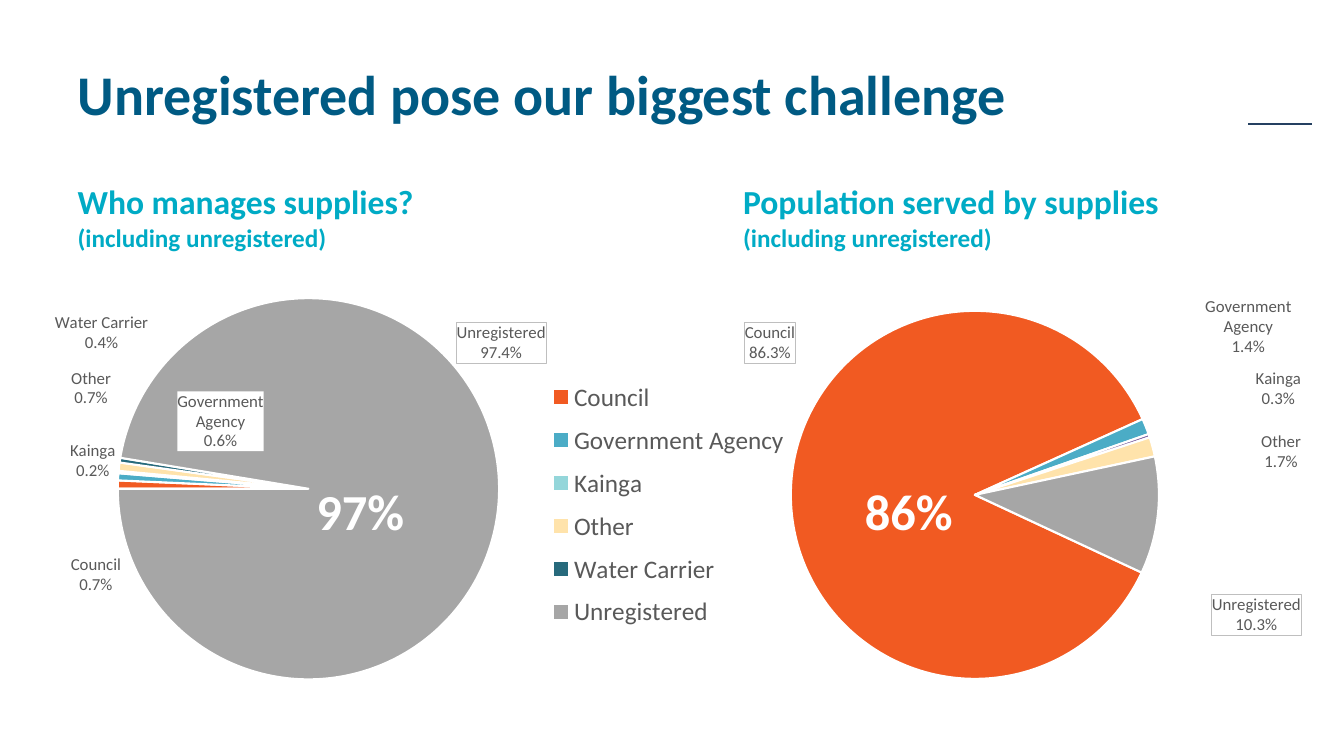
"""Build a slide with two pie charts about water supplies and the people they serve."""
import math
from dataclasses import dataclass

from lxml import etree
from pptx import Presentation
from pptx.chart.data import CategoryChartData
from pptx.dml.color import RGBColor
from pptx.enum.chart import XL_CHART_TYPE, XL_LEGEND_POSITION
from pptx.enum.shapes import MSO_CONNECTOR
from pptx.enum.text import MSO_ANCHOR, MSO_AUTO_SIZE, PP_ALIGN
from pptx.oxml import parse_xml
from pptx.oxml.ns import nsdecls, qn
from pptx.util import Inches, Pt

PIE = XL_CHART_TYPE.PIE
LEGEND_RIGHT = XL_LEGEND_POSITION.RIGHT
STRAIGHT = MSO_CONNECTOR.STRAIGHT
TOP = MSO_ANCHOR.TOP
FIT_SHAPE = MSO_AUTO_SIZE.SHAPE_TO_FIT_TEXT
LEFT = PP_ALIGN.LEFT


@dataclass(frozen=True)
class Theme:
    """Colours, font and type sizes of the slide."""
    font: str = "Calibri"
    title: str = "005A83"
    heading: str = "00ABC5"
    label: str = "595959"
    frame: str = "BFBFBF"
    rule: str = "254061"
    white: str = "FFFFFF"
    title_size: int = 40
    share_size: int = 36
    heading_size: int = 24
    small_size: int = 18
    label_size: int = 12


THEME = Theme()
TITLE = "Unregistered pose our biggest challenge"
SUBHEADING = "(including unregistered)"
CATEGORIES = ["Council", "Government Agency", "Kainga", "Other", "Water Carrier", "Unregistered"]
LABEL_WIDTHS = [0.5, 1.33, 0.45, 0.4, 0.9, 0.87]
LABEL_HEIGHT = 0.4
LABEL_GAP = 0.06
PIES = [
    {
        "heading": "Who manages supplies?", "heading_box": (0.77, 1.79, 6.16, 0.72),
        "share": "97%", "share_box": (3.04, 4.71, 1.08, 0.71),
        "box": (-0.16, 2.88, 8.82, 3.94), "plot": (0.13, 0.02, 0.47, 0.96),
        "legend": (0.635, 0.2, 0.27, 0.68), "start": 270,
        "values": [0.7, 0.6, 0.2, 0.7, 0.4, 97.4],
        "colors": ["F15A22", "4BACC6", "94D6DA", "FFE3AB", "276A7C", "A6A6A6"],
        "centers": [(0.95, 5.7), (1.95, 4.18), (0.92, 4.57), (0.9, 3.85), (1.02, 3.3), (4.96, 3.4)],
        "filled": {1, 5}, "framed": {5}, "wrapped": {},
    },
    {
        "heading": "Population served by supplies", "heading_box": (7.37, 1.79, 5.58, 0.72),
        "share": "86%", "share_box": (8.48, 4.71, 1.08, 0.71),
        "box": (6.67, 2.94, 6.52, 3.94), "plot": (0.18, 0, 0.56, 1),
        "legend": None, "start": 115,
        "values": [86.3, 1.4, 0.3, 1.7, 0, 10.3],
        "colors": ["F15A22", "4BACC6", "8064A2", "FFE3AB", "276A7C", "A6A6A6"],
        "centers": [(7.64, 3.4), (12.39, 3.23), (12.68, 3.85), (12.71, 4.48), None, (12.45, 6.1)],
        "filled": {0, 5}, "framed": {0, 5}, "wrapped": {1: (0.87, 0.6)},
    },
]


def color(code):
    """Turn a hex code into a colour."""
    return RGBColor.from_string(code)


def style(font, size, code, bold=False):
    """Set the face, size and colour of a font."""
    font.name, font.size, font.bold = THEME.font, Pt(size), bold
    font.color.rgb = color(code)


def write(frame, lines, margin=None, wrap=True):
    """Fill a text frame with one styled run per paragraph."""
    frame.word_wrap, frame.auto_size, frame.vertical_anchor = wrap, FIT_SHAPE, TOP
    if margin is not None:
        frame.margin_left = frame.margin_top = frame.margin_right = frame.margin_bottom = margin
    for index, (text, size, code) in enumerate(lines):
        para = frame.add_paragraph() if index else frame.paragraphs[0]
        para.alignment = LEFT
        para.space_before = Pt(1 if index else 0)
        span = para.add_run()
        span.text = text
        style(span.font, size, code, True)


def manual_layout(box, inner=False):
    """Give the layout element for a box in fractions of the chart."""
    target = '<c:layoutTarget val="inner"/>' if inner else ""
    modes = '<c:xMode val="edge"/><c:yMode val="edge"/>'
    sizes = "".join(f'<c:{name} val="{value}"/>' for name, value in zip("xywh", box))
    return parse_xml(f'<c:layout {nsdecls("c")}><c:manualLayout>{target}{modes}{sizes}'
                     "</c:manualLayout></c:layout>")


def label_offset(pie, index):
    """Give the move, in fractions of the chart, from the pie's rim to the label's place."""
    left, top, width, height = pie["box"]
    x, y, w, h = pie["plot"]
    radius = min(w * width, h * height) / 2 + LABEL_GAP
    values = pie["values"]
    turn = (sum(values[:index]) + values[index] / 2) / sum(values) * 360
    angle = (90 - pie["start"] - turn) % 360
    across, up = math.cos(math.radians(angle)), math.sin(math.radians(angle))
    label_width, label_height = pie["wrapped"].get(index, (LABEL_WIDTHS[index], LABEL_HEIGHT))
    side = math.copysign(label_width / 2, across)
    level = min(angle % 180, 180 - angle % 180) <= 5
    lift = 0 if level else math.copysign(label_height / 2, up)
    rim_x = left + (x + w / 2) * width + radius * across + side
    rim_y = top + (y + h / 2) * height - radius * up - lift
    goal_x, goal_y = pie["centers"][index]
    return (goal_x - rim_x) / width, (goal_y - rim_y) / height


def label_xml(pie, index):
    """Give the data label element of one slice."""
    if pie["centers"][index] is None:
        return f'<c:dLbl><c:idx val="{index}"/><c:delete val="1"/></c:dLbl>'
    x, y = label_offset(pie, index)
    solid = '<a:solidFill><a:srgbClr val="{}"/></a:solidFill>'.format
    fill = solid(THEME.white) if index in pie["filled"] else "<a:noFill/>"
    line = solid(THEME.frame) if index in pie["framed"] else "<a:noFill/>"
    return (f'<c:dLbl><c:idx val="{index}"/><c:layout><c:manualLayout><c:x val="{x:.4f}"/>'
            f'<c:y val="{y:.4f}"/></c:manualLayout></c:layout>'
            f'<c:numFmt formatCode="0.0%" sourceLinked="0"/>'
            f'<c:spPr>{fill}<a:ln w="9525">{line}</a:ln></c:spPr>{label_text()}</c:dLbl>')


def label_text():
    """Give the text style and shown parts shared by all data labels."""
    flags = {"LegendKey": 0, "Val": 0, "CatName": 1, "SerName": 0, "Percent": 1, "BubbleSize": 0}
    shown = "".join(f'<c:show{name} val="{flag}"/>' for name, flag in flags.items())
    return (f'<c:txPr><a:bodyPr/><a:lstStyle/><a:p><a:pPr><a:defRPr sz="{THEME.label_size * 100}">'
            f'<a:solidFill><a:srgbClr val="{THEME.label}"/></a:solidFill>'
            f'<a:latin typeface="{THEME.font}"/></a:defRPr></a:pPr><a:endParaRPr lang="en-US"/></a:p>'
            f'</c:txPr><c:dLblPos val="outEnd"/>{shown}<c:separator>\n</c:separator>')


def add_pie(page, pie):
    """Add one pie chart with its labels and, if wanted, its legend."""
    data = CategoryChartData()
    data.categories = CATEGORIES
    data.add_series("Series 1", pie["values"])
    chart = page.shapes.add_chart(PIE, *map(Inches, pie["box"]), data).chart
    style(chart.font, THEME.label_size, THEME.label)
    chart.has_title = False
    chart.has_legend = pie["legend"] is not None
    if chart.has_legend:
        chart.legend.position = LEGEND_RIGHT
        chart.legend.include_in_layout = False
        style(chart.legend.font, THEME.small_size, THEME.label)
        legend = chart.legend._element
        for old in legend.findall(qn("c:layout")):
            legend.remove(old)
        legend.find(qn("c:legendPos")).addnext(manual_layout(pie["legend"]))
    plot = chart.plots[0]
    plot.vary_by_categories = True
    series = plot.series[0]
    for index, code in enumerate(pie["colors"]):
        form = series.points[index].format
        form.fill.solid()
        form.fill.fore_color.rgb = color(code)
        form.line.color.rgb = color(THEME.white)
        form.line.width = Pt(1.5)
    labels = "".join(label_xml(pie, index) for index in range(len(CATEGORIES)))
    series._element.find(qn("c:cat")).addprevious(parse_xml(
        f'<c:dLbls {nsdecls("c", "a")}>{labels}<c:numFmt formatCode="0.0%" sourceLinked="0"/>'
        f'{label_text()}<c:showLeaderLines val="0"/></c:dLbls>'))
    group = plot._element
    for old in group.findall(qn("c:firstSliceAng")):
        group.remove(old)
    etree.SubElement(group, qn("c:firstSliceAng")).set("val", str(pie["start"]))
    area = group.getparent()
    for old in area.findall(qn("c:layout")):
        area.remove(old)
    area.insert(0, manual_layout(pie["plot"], True))


def main():
    """Build and save the deck."""
    deck = Presentation()
    deck.slide_width, deck.slide_height = Inches(13.33), Inches(7.5)
    page = deck.slides.add_slide(deck.slide_layouts[5])
    title = page.shapes.title
    title.left, title.top, title.width, title.height = map(Inches, (0.77, 0.59, 10.16, 0.67))
    write(title.text_frame, [(TITLE, THEME.title_size, THEME.title)], 0)
    rule = page.shapes.add_connector(STRAIGHT, *map(Inches, (13.01, 1.23, 12.38, 1.23)))
    rule.line.color.rgb, rule.line.width = color(THEME.rule), Pt(1)
    etree.SubElement(rule._element.spPr, qn("a:effectLst"))
    for pie in PIES:
        add_pie(page, pie)
    for pie in PIES:
        heading = page.shapes.add_textbox(*map(Inches, pie["heading_box"]))
        write(heading.text_frame, [(pie["heading"], THEME.heading_size, THEME.heading),
                                   (SUBHEADING, THEME.small_size, THEME.heading)], 0)
        share = page.shapes.add_textbox(*map(Inches, pie["share_box"]))
        write(share.text_frame, [(pie["share"], THEME.share_size, THEME.white)], wrap=False)
    deck.save("out.pptx")


if __name__ == "__main__":
    main()
